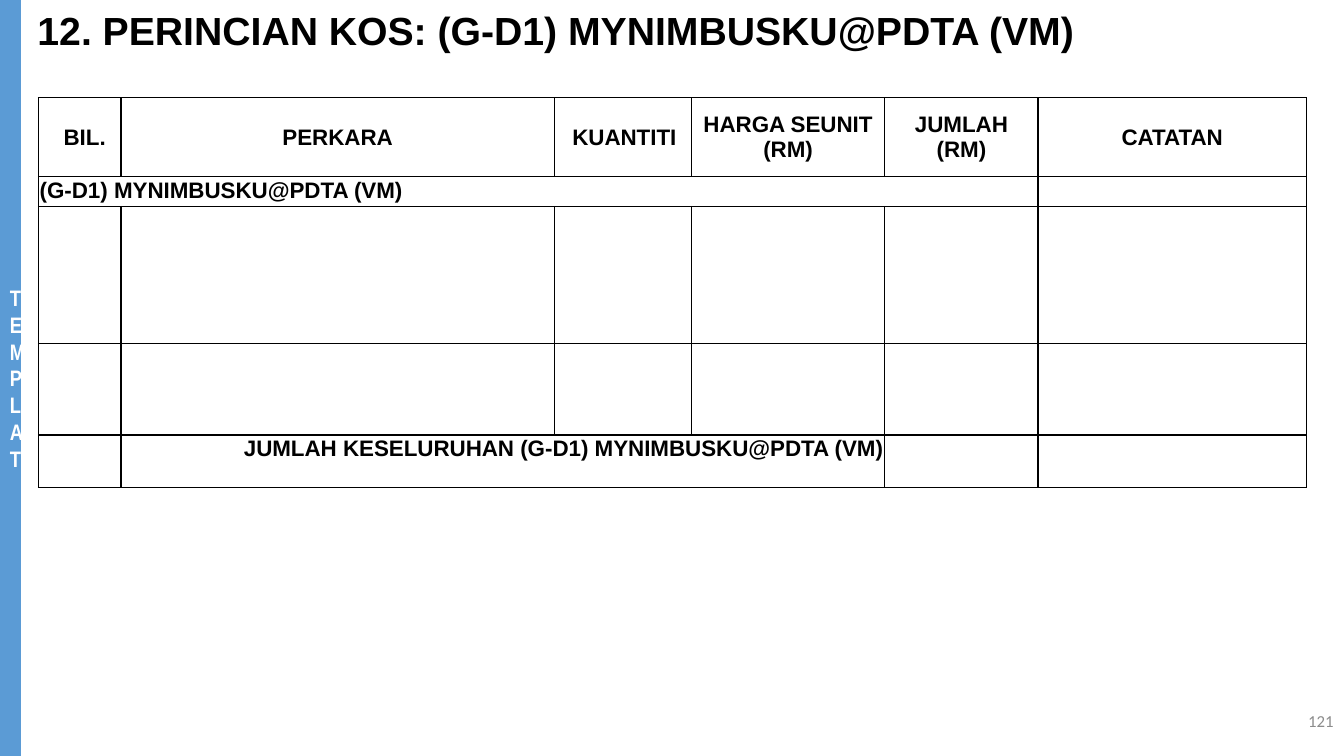
from lxml.etree import SubElement
from pptx import Presentation
from pptx.dml.color import RGBColor
from pptx.enum.shapes import MSO_SHAPE
from pptx.enum.text import MSO_ANCHOR, PP_ALIGN
from pptx.oxml.ns import qn
from pptx.util import Cm, Pt

LEFT, CENTER, RIGHT = PP_ALIGN.LEFT, PP_ALIGN.CENTER, PP_ALIGN.RIGHT
TOP, MIDDLE = MSO_ANCHOR.TOP, MSO_ANCHOR.MIDDLE


def rgb(value):
    return RGBColor.from_string(value)


def write(tf, lines, color, align=LEFT, spacing=None, **font):
    for i, line in enumerate(lines):
        p = tf.paragraphs[0] if i == 0 else tf.add_paragraph()
        p.alignment = align
        p.line_spacing = spacing
        r = p.add_run()
        r.text = line
        r.font.color.rgb = rgb(color)
        for name, value in font.items():
            setattr(r.font, name, value)


prs = Presentation()
prs.slide_width, prs.slide_height = Cm(33.87), Cm(19.05)
s = prs.slides.add_slide(prs.slide_layouts[5])

sidebar = s.shapes.add_shape(MSO_SHAPE.RECTANGLE, 0, 0, Cm(0.53), prs.slide_height)
sidebar.shadow.inherit = False
sidebar.fill.solid()
sidebar.fill.fore_color.rgb = rgb("5B9BD5")
sidebar.line.fill.background()
tf = sidebar.text_frame
tf.word_wrap = True
tf.vertical_anchor = MIDDLE
write(tf, ["TEMPLAT"], "FFFFFF", CENTER, name="Arial Narrow", size=Pt(16), bold=True)

title = s.shapes.title
title.left, title.top, title.width, title.height = Cm(0.69), Cm(0), Cm(29.21), Cm(1.65)
title.text_frame.vertical_anchor = MIDDLE
write(title.text_frame, ["12. PERINCIAN KOS: (G-D1) MYNIMBUSKU@PDTA (VM)"], "000000",
      spacing=0.9, name="Arial", size=Pt(28), bold=True)

widths = [2.08, 10.92, 3.45, 4.88, 3.86, 6.76]
heights = [1.98, 0.76, 3.45, 2.31, 1.32]
filled_rows = {0, 1, 4}
table = s.shapes.add_table(len(heights), len(widths), Cm(0.97), Cm(2.46),
                           Cm(sum(widths)), Cm(sum(heights))).table
table.first_row = table.horz_banding = False
for column, width in zip(table.columns, widths):
    column.width = Cm(width)
for row, height in zip(table.rows, heights):
    row.height = Cm(height)
table.cell(1, 0).merge(table.cell(1, 4))
table.cell(4, 1).merge(table.cell(4, 3))

headers = ["BIL.", "PERKARA", "KUANTITI", "HARGA SEUNIT\n(RM)", "JUMLAH\n(RM)", "CATATAN"]
texts = {(0, c): (header.split("\n"), CENTER, None, MIDDLE) for c, header in enumerate(headers)}
texts[1, 0] = (["(G-D1) MYNIMBUSKU@PDTA (VM)"], LEFT, Pt(15.7), MIDDLE)
texts[4, 1] = (["JUMLAH KESELURUHAN (G-D1) MYNIMBUSKU@PDTA (VM)"], RIGHT, None, TOP)
indents = {(0, 0): Cm(0.25), (0, 2): Cm(0.08)}
margins = {"margin_left": Cm(0.03), "margin_top": Cm(0.03), "margin_right": Cm(0.03), "margin_bottom": 0}

for row in range(len(heights)):
    for col in range(len(widths)):
        cell = table.cell(row, col)
        for name, value in margins.items():
            setattr(cell, name, value)
        tcPr = cell._tc.get_or_add_tcPr()
        for side in ("a:lnL", "a:lnR", "a:lnT", "a:lnB"):
            line = SubElement(tcPr, qn(side), w=str(Pt(1)))
            SubElement(SubElement(line, qn("a:solidFill")), qn("a:srgbClr"), val="000000")
        if row in filled_rows:
            cell.fill.solid()
            cell.fill.fore_color.rgb = rgb("FFFFFF")
        else:
            cell.fill.background()
        p = cell.text_frame.paragraphs[0]
        if (row, col) in texts:
            lines, align, spacing, cell.vertical_anchor = texts[row, col]
            write(cell.text_frame, lines, "000000", align, spacing,
                  name="Arial", size=Pt(16), bold=True)
            if (row, col) in indents:
                p._p.get_or_add_pPr().set("marL", str(indents[row, col]))
        else:
            SubElement(p._p, qn("a:endParaRPr"), sz="1200")

number = s.shapes.add_textbox(Cm(26.24), Cm(17.65), Cm(7.62), Cm(1.02))
tf = number.text_frame
tf.word_wrap = True
tf.vertical_anchor = MIDDLE
write(tf, ["121"], "8C8C8C", RIGHT, name="Calibri", size=Pt(12))

prs.save("out.pptx")
